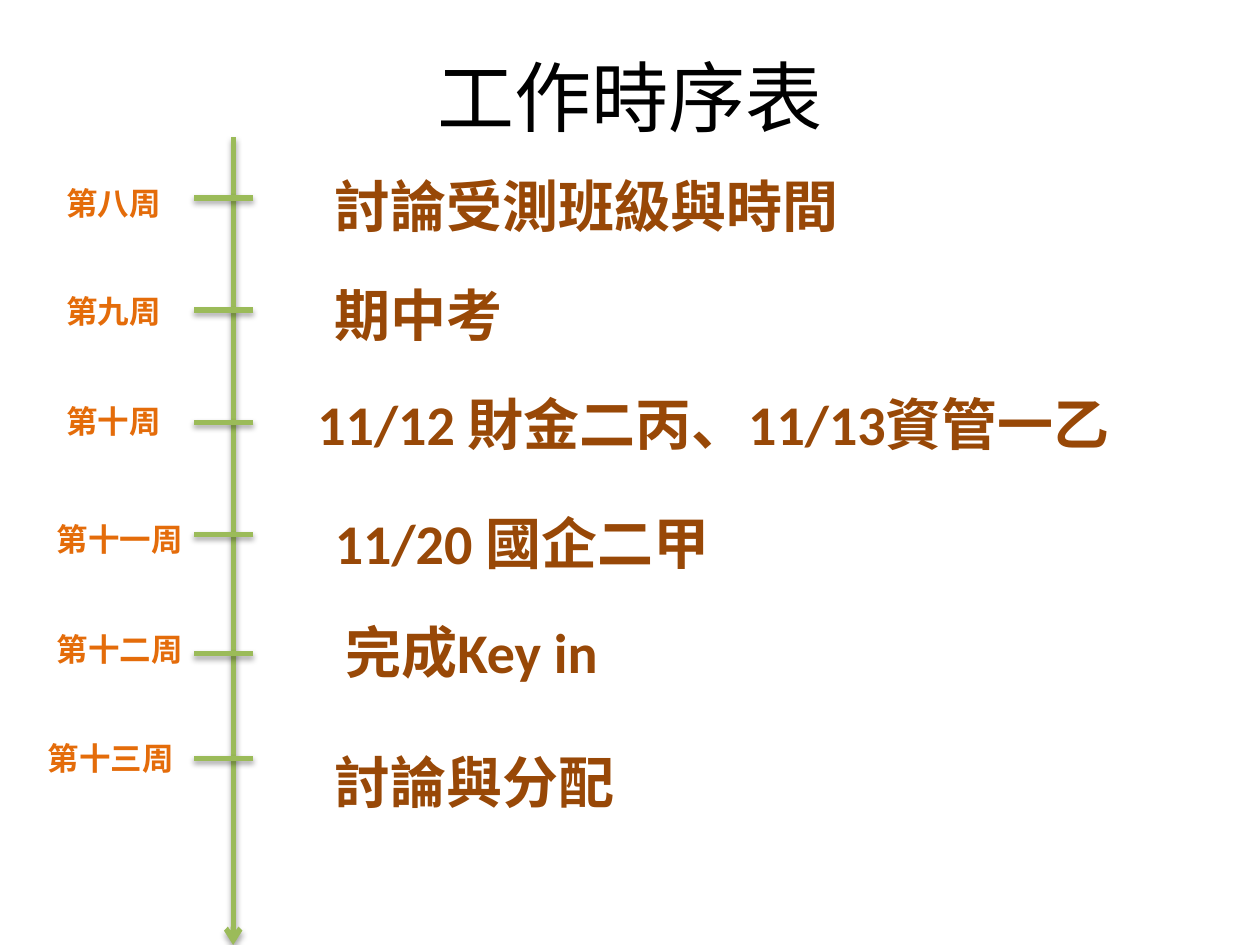
from collections import namedtuple
from dataclasses import dataclass

from lxml import etree
from pptx import Presentation
from pptx.dml.color import RGBColor
from pptx.enum import shapes, text
from pptx.oxml import ns, parse_xml
from pptx.util import Cm, Pt


@dataclass(frozen=True)
class Theme:
    font: str = "Calibri"
    title_color: str = "000000"
    week_color: str = "E46C0A"
    task_color: str = "984807"
    line_color: str = "9BBB59"
    title_size: int = 44
    week_size: int = 18
    task_size: int = 32
    line_width: int = 3


THEME = Theme()
Box = namedtuple("Box", "left top width height", defaults=[1.63])
Row = namedtuple("Row", "tick_y week week_box task task_box align",
                 defaults=[text.PP_ALIGN.LEFT])

AXIS_X, AXIS_TOP, AXIS_BOTTOM = 4.7, 2.77, 19.05
TICK_LEFT, TICK_RIGHT = 3.91, 5.11

ROWS = [
    Row(3.99, "第八周", Box(1.09, 3.58, 3, 1.02),
        ["討論受測班級與時間"], Box(6.5, 3.33, 12.09)),
    Row(6.25, "第九周", Box(1.09, 5.77, 3, 1.02),
        ["期中考"], Box(6.5, 5.54, 6.4)),
    Row(8.51, "第十周", Box(1.09, 7.98, 3, 1.02),
        ["11/12 ", "財金二丙、", "11/13", "資管一乙"],
        Box(5.69, 7.72, 17.4, 3), text.PP_ALIGN.CENTER),
    Row(10.77, "第十一周", Box(0.89, 10.36, 3.81, 1.02),
        ["11/20 ", "國企二甲"], Box(6.5, 10.13, 9.19)),
    Row(13.18, "第十二周", Box(0.89, 12.57, 3.61, 1.02),
        ["完成", "Key in"], Box(6.71, 12.32, 6.4)),
    Row(15.29, "第十三周", Box(0.71, 14.78, 3.99, 1.02),
        ["討論與分配"], Box(6.5, 14.94, 11.2)),
]

SHADOW = (
    f'<a:effectLst {ns.nsdecls("a")}>'
    '<a:outerShdw blurRad="40000" dist="23000" dir="5400000" rotWithShape="0">'
    '<a:srgbClr val="000000"><a:alpha val="35000"/></a:srgbClr>'
    '</a:outerShdw></a:effectLst>'
)


def add_text(parent, runs, box, size, color, bold=True,
             align=text.PP_ALIGN.LEFT, anchor=text.MSO_ANCHOR.TOP):
    sp = parent.add_textbox(*(Cm(v) for v in box))
    tf = sp.text_frame
    tf.word_wrap = True
    tf.vertical_anchor = anchor
    p = tf.paragraphs[0]
    p.alignment = align
    for content in runs:
        r = p.add_run()
        r.text = content
        r.font.name = THEME.font
        r.font.size = Pt(size)
        r.font.bold = bold
        r.font.color.rgb = RGBColor.from_string(color)


def add_line(parent, x1, y1, x2, y2, arrow=False):
    line = parent.add_connector(shapes.MSO_CONNECTOR.STRAIGHT,
                                Cm(x1), Cm(y1), Cm(x2), Cm(y2))
    line.line.color.rgb = RGBColor.from_string(THEME.line_color)
    line.line.width = Pt(THEME.line_width)
    if arrow:
        ln = line.line._get_or_add_ln()
        etree.SubElement(ln, ns.qn("a:tailEnd"), type="arrow")
    line._element.spPr.append(parse_xml(SHADOW))


def add_timeline(s):
    group = s.shapes.add_group_shape().shapes
    add_line(group, AXIS_X, AXIS_TOP, AXIS_X, AXIS_BOTTOM, arrow=True)
    for row in ROWS:
        add_line(group, TICK_RIGHT, row.tick_y, TICK_LEFT, row.tick_y)
        add_text(group, [row.week], row.week_box, THEME.week_size,
                 THEME.week_color)


def add_tasks(s):
    for row in ROWS:
        add_text(s.shapes, row.task, row.task_box, THEME.task_size,
                 THEME.task_color, align=row.align)


def main():
    prs = Presentation()
    prs.slide_width, prs.slide_height = Cm(25.4), Cm(19.05)
    s = prs.slides.add_slide(prs.slide_layouts[6])
    add_text(s.shapes, ["工作時序表"], Box(1.27, 0.76, 22.86, 2.36),
             THEME.title_size, THEME.title_color, bold=False,
             align=text.PP_ALIGN.CENTER, anchor=text.MSO_ANCHOR.MIDDLE)
    add_timeline(s)
    add_tasks(s)
    prs.save("out.pptx")


if __name__ == "__main__":
    main()
